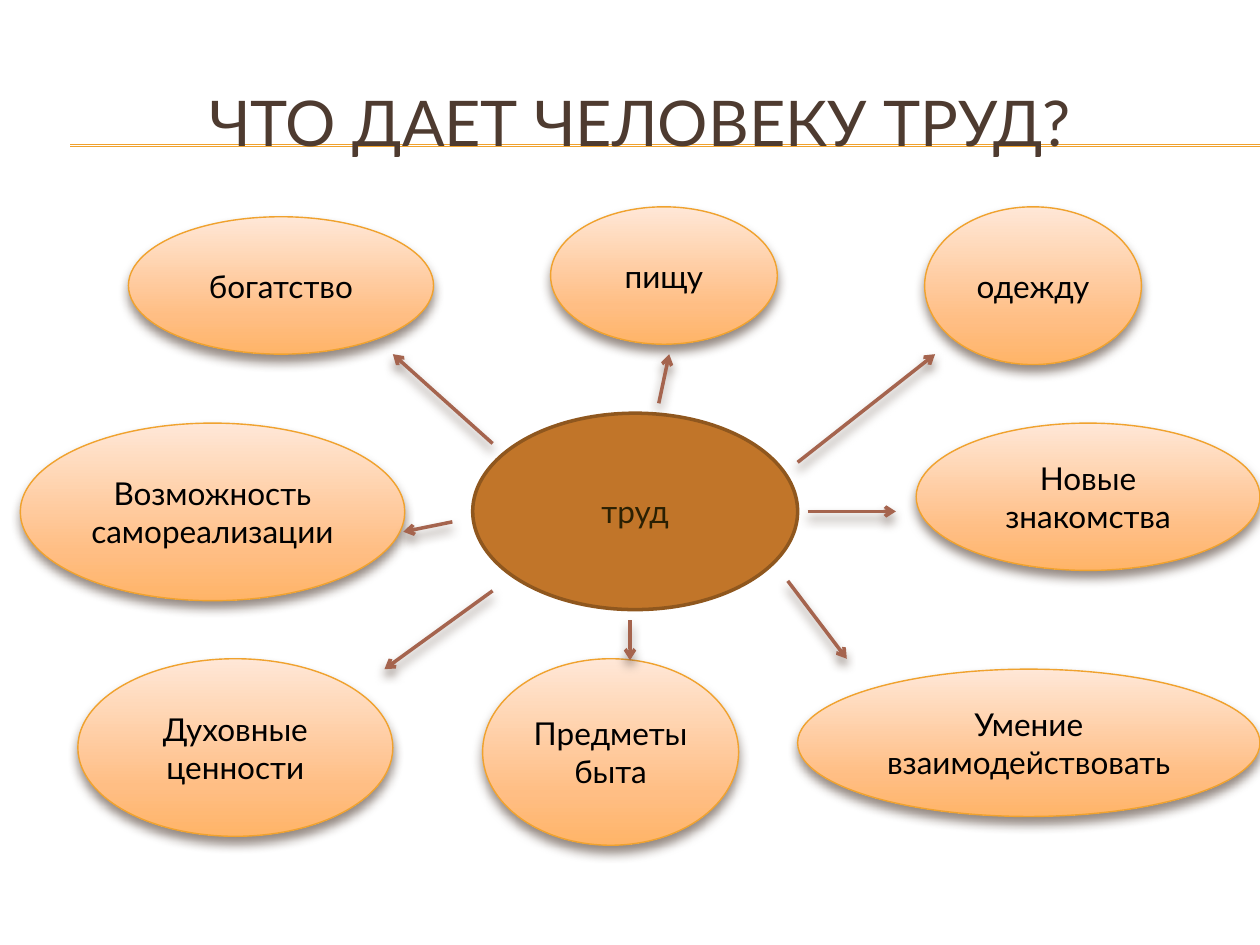
from copy import deepcopy

from lxml.etree import SubElement
from pptx import Presentation
from pptx.dml.color import RGBColor
from pptx.enum.shapes import MSO_CONNECTOR as Connector, MSO_SHAPE as Shape
from pptx.enum.text import MSO_ANCHOR as Anchor, PP_ALIGN as Align
from pptx.oxml.ns import qn
from pptx.util import Cm, Pt

FONT = "Lato"
GOLD = "F0A22E"
GRADIENT = [(0, "FFE7D7"), (0.72, "FFBE84"), (1, "FFB468")]


def format_text(shape, text, size, color):
    frame = shape.text_frame
    frame.text = text
    frame.word_wrap = True
    frame.vertical_anchor = Anchor.MIDDLE
    paragraph = frame.paragraphs[0]
    paragraph.alignment = Align.CENTER
    font = paragraph.runs[0].font
    font.name = FONT
    font.size = Pt(size)
    font.color.rgb = RGBColor.from_string(color)


def set_effects(shape, shadow):
    effects = SubElement(shape._element.spPr, qn("a:effectLst"))
    if shadow:
        outer = SubElement(effects, qn("a:outerShdw"), blurRad=str(Pt(6)), dist=str(Pt(4)),
                           dir="5400000", rotWithShape="0")
        color = SubElement(outer, qn("a:srgbClr"), val="4E3B30")
        SubElement(color, qn("a:alpha"), val="60000")


presentation = Presentation()
presentation.slide_width = Cm(25.4)
presentation.slide_height = Cm(19.05)
slide = presentation.slides.add_slide(presentation.slide_layouts[5])
shapes = slide.shapes

title = shapes.title
title.left, title.top, title.width, title.height = Cm(0.84), Cm(1.27), Cm(24.13), Cm(2.34)
format_text(title, "ЧТО ДАЕТ ЧЕЛОВЕКУ ТРУД?", 36, "4E3B30")

for y in (2.92, 2.95):
    rule = shapes.add_connector(Connector.STRAIGHT, Cm(1.42), Cm(y), Cm(25.4), Cm(y))
    rule.line.color.rgb = RGBColor.from_string(GOLD)
    rule.line.width = Pt(0.75)
    set_effects(rule, shadow=False)
    title._element.addprevious(rule._element)

center = shapes.add_shape(Shape.OVAL, Cm(9.53), Cm(8.33), Cm(6.55), Cm(3.96))
center.fill.solid()
center.fill.fore_color.rgb = RGBColor.from_string("C17529")
center.line.color.rgb = RGBColor.from_string("8F571E")
center.line.width = Pt(2)
set_effects(center, shadow=False)
format_text(center, "труд", 18, "2A2003")

benefits = [
    ("богатство", 2.59, 4.37, 6.15, 2.77),
    ("Духовные ценности", 1.57, 13.28, 6.35, 3.58),
    ("пищу", 11.1, 4.17, 4.57, 2.77),
    ("одежду", 18.64, 4.17, 4.37, 3.18),
    ("Новые знакомства", 18.47, 8.53, 6.93, 2.97),
    ("Умение взаимодействовать", 16.08, 13.49, 9.32, 2.97),
    ("Предметы быта", 9.73, 13.28, 5.16, 3.76),
    ("Возможность самореализации", 0.41, 8.53, 7.75, 3.58),
]
for text, *box in benefits:
    benefit = shapes.add_shape(Shape.FLOWCHART_CONNECTOR, *map(Cm, box))
    benefit.fill.gradient()
    benefit.fill.gradient_angle = 270
    stop_list = benefit._element.spPr.find(qn("a:gradFill")).find(qn("a:gsLst"))
    stop_list.append(deepcopy(stop_list[-1]))
    for stop, (position, color) in zip(benefit.fill.gradient_stops, GRADIENT):
        stop.position = position
        stop.color.rgb = RGBColor.from_string(color)
    benefit.line.color.rgb = RGBColor.from_string(GOLD)
    benefit.line.width = Pt(0.79)
    set_effects(benefit, shadow=True)
    format_text(benefit, text, 18, "000000")

arrows = [
    (16.08, 9.32, 18.85, 7.14),
    (16.28, 10.31, 18.06, 10.31),
    (15.88, 11.71, 17.07, 13.28),
    (12.7, 12.5, 12.7, 13.31),
    (9.93, 11.91, 7.75, 13.49),
    (9.12, 10.52, 8.13, 10.72),
    (9.93, 8.94, 7.92, 7.14),
    (13.28, 8.13, 13.49, 7.14),
]
for ends in arrows:
    arrow = shapes.add_connector(Connector.STRAIGHT, *map(Cm, ends))
    arrow.line.color.rgb = RGBColor.from_string("A5644E")
    arrow.line.width = Pt(2)
    SubElement(arrow._element.spPr.find(qn("a:ln")), qn("a:tailEnd"), type="arrow")
    set_effects(arrow, shadow=True)

presentation.save("out.pptx")
